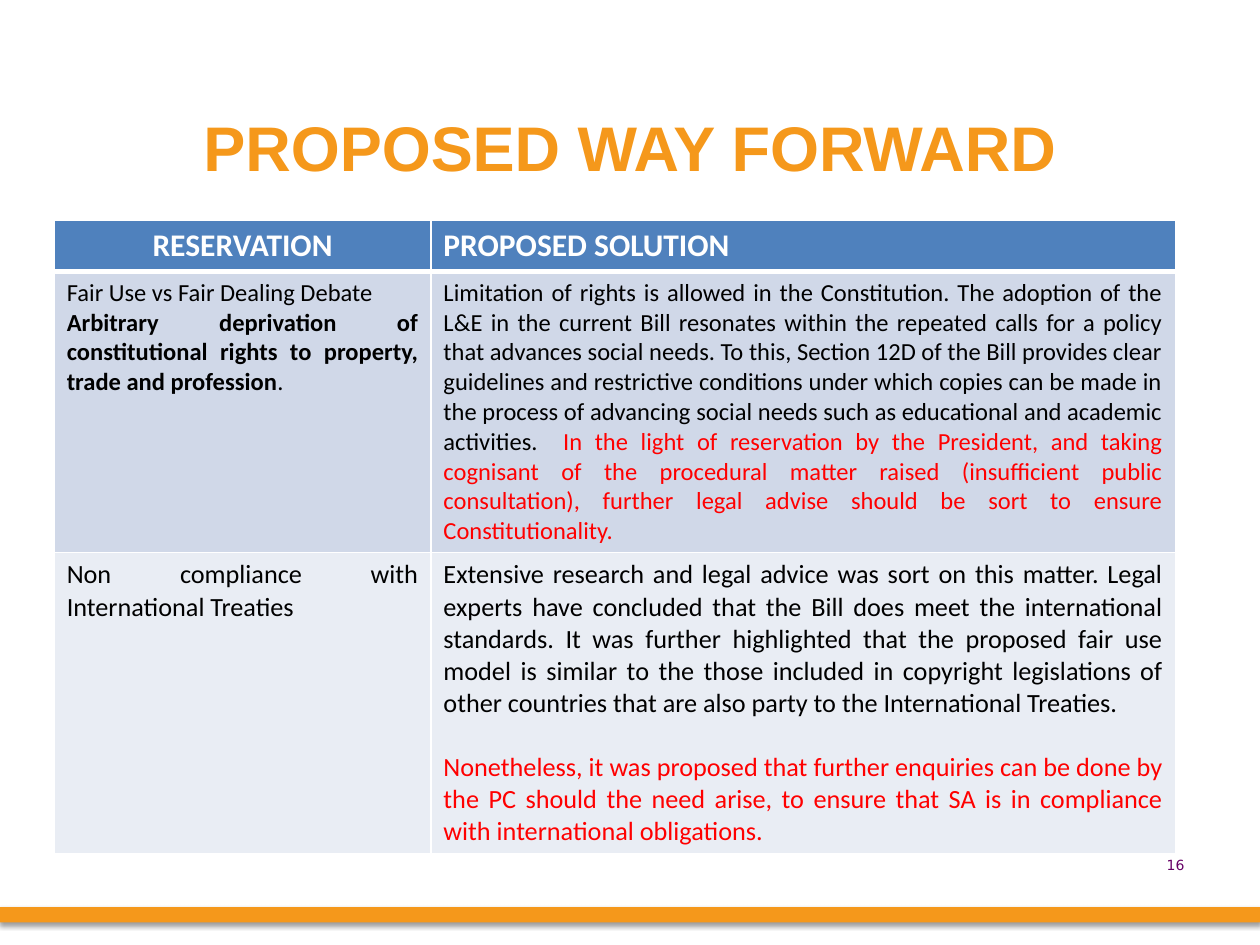
import pptx
import pptx.dml.color
import pptx.enum.shapes
import pptx.enum.text
import pptx.oxml
import pptx.util
from pptx.util import Inches

COLORS = {
    "orange": "F5981B", "white": "FFFFFF", "black": "000000", "red": "FF0000",
    "header": "4F81BD", "band1": "D0D8E8", "band2": "E9EDF4", "purple": "660066",
}
ALIGN = pptx.enum.text.PP_ALIGN
ANCHOR = pptx.enum.text.MSO_ANCHOR
NS = 'xmlns:a="http://schemas.openxmlformats.org/drawingml/2006/main"'

HEADERS = [("RESERVATION", ALIGN.CENTER), ("PROPOSED SOLUTION", ALIGN.LEFT)]
ROWS = [
    (14, "band1", [
        [[("Fair Use vs Fair Dealing Debate", "black", False)],
         [("Arbitrary deprivation of constitutional rights to property, trade and profession", "black", True),
          (".", "black", False)]],
        [[("Limitation of rights is allowed in the Constitution. The adoption of the L&E in the current "
           "Bill resonates within the repeated calls for a policy that advances social needs. To this, "
           "Section 12D of the Bill provides clear guidelines and restrictive conditions under which "
           "copies can be made in the process of advancing social needs such as educational and academic "
           "activities.  ", "black", False),
          ("In the light of reservation by the President, and taking cognisant of the procedural matter "
           "raised (insufficient public consultation), further legal advise should be sort to ensure "
           "Constitutionality.", "red", False)]],
    ], 0),
    (15, "band2", [
        [[("Non compliance with International Treaties", "black", False)]],
        [[("Extensive research and legal advice was sort on this matter. Legal experts have concluded "
           "that the Bill does meet the international standards. It was further highlighted that the "
           "proposed fair use model is similar to the those included in copyright legislations of other "
           "countries that are also party to the International Treaties.", "black", False)],
         [("Nonetheless, it was proposed that further enquiries can be done by the PC should the need "
           "arise, to ensure that SA is in compliance with international obligations.", "red", False)]],
    ], 18),
]


class Deck:
    """Holds the presentation, its current slide and the shared style."""

    def __init__(self):
        self.prs = pptx.Presentation()
        self.prs.slide_width, self.prs.slide_height = Inches(10), Inches(7.5)
        self.s = self.prs.slides.add_slide(self.prs.slide_layouts[5])

    def color(self, name):
        return pptx.dml.color.RGBColor.from_string(COLORS[name])

    def style(self, r, size, font, color, bold=False):
        r.font.size = pptx.util.Pt(size)
        r.font.name = font
        r.font.bold = bold
        r.font.color.rgb = self.color(color)

    def bar(self, left, top, width, height):
        sp = self.s.shapes.add_shape(pptx.enum.shapes.MSO_SHAPE.RECTANGLE, left, top, width, height)
        sp.fill.solid()
        sp.fill.fore_color.rgb = self.color("orange")
        sp.line.fill.background()
        sp._element.spPr.append(pptx.oxml.parse_xml(
            f'<a:effectLst {NS}><a:outerShdw blurRad="39370" dist="20320" dir="5400000" rotWithShape="0">'
            f'<a:srgbClr val="{COLORS["black"]}"><a:alpha val="38000"/></a:srgbClr>'
            '</a:outerShdw></a:effectLst>'))

    def title(self, text, left, top, width, height):
        sp = self.s.shapes.title
        sp.left, sp.top, sp.width, sp.height = left, top, width, height
        tf = sp.text_frame
        tf.text = text
        tf.vertical_anchor = ANCHOR.MIDDLE
        p = tf.paragraphs[0]
        p.alignment = ALIGN.CENTER
        self.style(p.runs[0], 36, "Arial", "orange", True)

    def text(self, text, left, top, width, height):
        tf = self.s.shapes.add_textbox(left, top, width, height).text_frame
        tf.word_wrap = True
        tf.text = text
        p = tf.paragraphs[0]
        p.alignment = ALIGN.RIGHT
        self.style(p.runs[0], 8, "DejaVu Sans", "purple")

    def cell(self, cell, fill, paragraphs, size, align, gap=0, bottom=1):
        tcPr = cell._tc.get_or_add_tcPr()
        for side, width in (("L", 1), ("R", 1), ("T", 1), ("B", bottom)):
            tcPr.append(pptx.oxml.parse_xml(
                f'<a:ln{side} {NS} w="{pptx.util.Pt(width)}"><a:solidFill>'
                f'<a:srgbClr val="{COLORS["white"]}"/></a:solidFill></a:ln{side}>'))
        cell.fill.solid()
        cell.fill.fore_color.rgb = self.color(fill)
        tf = cell.text_frame
        for i, runs in enumerate(paragraphs):
            p = tf.add_paragraph() if i else tf.paragraphs[0]
            p.alignment = align
            if i and gap:
                p.space_before = pptx.util.Pt(gap)
            for text, color, bold in runs:
                r = p.add_run()
                r.text = text
                self.style(r, size, "Calibri", color, bold)

    def table(self, left, top, widths, heights):
        table = self.s.shapes.add_table(
            len(heights), len(widths), left, top, Inches(sum(widths)), Inches(sum(heights))).table
        for column, width in zip(table.columns, widths):
            column.width = Inches(width)
        for row, height in zip(table.rows, heights):
            row.height = Inches(height)
        for c, (text, align) in enumerate(HEADERS):
            self.cell(table.cell(0, c), "header", [[(text, "white", True)]], 18, align, bottom=3)
        for i, (size, fill, cells, gap) in enumerate(ROWS, 1):
            for c, paragraphs in enumerate(cells):
                self.cell(table.cell(i, c), fill, paragraphs, size, ALIGN.JUSTIFY, gap)


def main():
    deck = Deck()
    deck.bar(Inches(0), Inches(7.2), Inches(10), Inches(0.12))
    deck.title("PROPOSED WAY FORWARD", Inches(0.5), Inches(0.77), Inches(9), Inches(0.78))
    deck.table(Inches(0.43), Inches(1.75), [2.99, 5.91], [0.39, 2.14, 2.3])
    deck.text("16", Inches(8.94), Inches(6.75), Inches(0.56), Inches(0.4))
    deck.prs.save("out.pptx")


if __name__ == "__main__":
    main()
